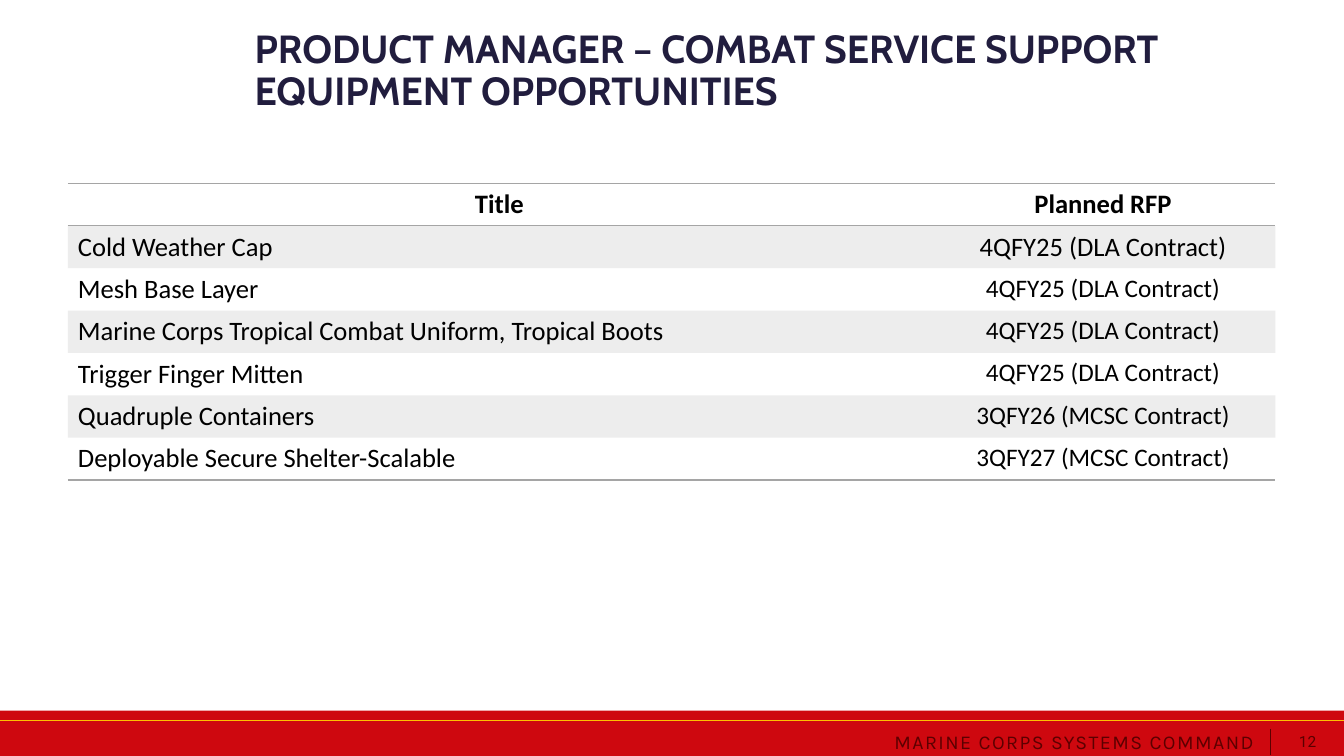
import pptx
import pptx.dml.color
import pptx.enum.shapes
import pptx.enum.text
import pptx.oxml
import pptx.oxml.ns
import pptx.util
import lxml.etree

Pt = pptx.util.Pt
ALIGN = pptx.enum.text.PP_ALIGN
ANCHOR = pptx.enum.text.MSO_ANCHOR

COLORS = {
    "red": "CE080F",
    "gold": "FFC000",
    "maroon": "5C0000",
    "navy": "211D3E",
    "black": "000000",
    "rule": "A5A5A5",
    "band": "A5A5A5",
}
OPPORTUNITIES = [
    ("Title", "Planned RFP"),
    ("Cold Weather Cap", "4QFY25 (DLA Contract)"),
    ("Mesh Base Layer", "4QFY25 (DLA Contract)"),
    ("Marine Corps Tropical Combat Uniform, Tropical Boots", "4QFY25 (DLA Contract)"),
    ("Trigger Finger Mitten", "4QFY25 (DLA Contract)"),
    ("Quadruple Containers", "3QFY26 (MCSC Contract)"),
    ("Deployable Secure Shelter-Scalable", "3QFY27 (MCSC Contract)"),
]
COLUMN_WIDTHS = (616.3, 246.2)
ROW_HEIGHT = 30.3


def rgb(name):
    """Return the palette colour of that name."""
    return pptx.dml.color.RGBColor.from_string(COLORS[name])


def write(frame, text, font="Calibri", size=19, color="black", bold=False,
          align=ALIGN.LEFT, line_spacing=1.0, tracking=0):
    """Put one formatted paragraph into a text frame."""
    paragraph = frame.paragraphs[0]
    paragraph.alignment = align
    paragraph.line_spacing = line_spacing
    paragraph.space_before = Pt(0)
    run = paragraph.add_run()
    run.text = text
    run.font.name = font
    run.font.size = Pt(size)
    run.font.bold = bold
    run.font.color.rgb = rgb(color)
    if tracking:
        run.font._element.set("spc", str(tracking * 100))


def set_frame(frame, inset, anchor=ANCHOR.TOP):
    """Set wrapping, anchor and margins (horizontal, vertical) of a text frame."""
    frame.word_wrap = True
    frame.auto_size = pptx.enum.text.MSO_AUTO_SIZE.NONE
    frame.vertical_anchor = anchor
    frame.margin_left = frame.margin_right = Pt(inset[0])
    frame.margin_top = frame.margin_bottom = Pt(inset[1])


def add_label(slide, box, text, inset=(0, 0), anchor=ANCHOR.TOP, **style):
    """Add a text box with one formatted paragraph."""
    frame = slide.shapes.add_textbox(*map(Pt, box)).text_frame
    set_frame(frame, inset, anchor)
    write(frame, text, **style)


def add_rule(slide, ends, color, width):
    """Add a straight line without shadow."""
    rule = slide.shapes.add_connector(
        pptx.enum.shapes.MSO_CONNECTOR.STRAIGHT, *map(Pt, ends))
    rule.line.color.rgb = rgb(color)
    rule.line.width = Pt(width)
    lxml.etree.SubElement(rule._element.spPr, pptx.oxml.ns.qn("a:effectLst"))


def add_footer(slide):
    """Draw the red footer with its lines, name and page number."""
    band = slide.shapes.add_shape(
        pptx.enum.shapes.MSO_SHAPE.RECTANGLE, Pt(0), Pt(507.6), Pt(960), Pt(32.4))
    band.shadow.inherit = False
    band.fill.solid()
    band.fill.fore_color.rgb = rgb("red")
    band.line.fill.background()
    add_rule(slide, (0, 514.8, 960, 514.8), "gold", 0.5)
    add_rule(slide, (907.5, 520.6, 907.5, 539.3), "maroon", 0.25)
    add_label(slide, (911.5, 524.9, 28.8, 10.8), "12", anchor=ANCHOR.MIDDLE,
              font="Roboto", size=11, color="maroon", align=ALIGN.RIGHT, line_spacing=0.9)
    add_label(slide, (489.6, 517.7, 413.3, 24.3), "MARINE CORPS SYSTEMS COMMAND",
              inset=(7.2, 3.6), font="Karla", size=14, color="maroon",
              align=ALIGN.RIGHT, tracking=1)


def add_title(slide, text):
    """Place and format the title placeholder."""
    title = slide.shapes.title
    title.left, title.top, title.width, title.height = map(Pt, (181.8, 20.9, 730, 28.1))
    set_frame(title.text_frame, (0, 0))
    write(title.text_frame, text, font="Cabin", size=28, color="navy",
          bold=True, line_spacing=0.9)


def set_borders(cell, ruled):
    """Rule the named edges of a cell and clear the others."""
    properties = cell._tc.get_or_add_tcPr()
    for index, edge in enumerate(("lnL", "lnR", "lnT", "lnB")):
        paint = "<a:noFill/>"
        if edge in ruled:
            paint = f'<a:solidFill><a:srgbClr val="{COLORS["rule"]}"/></a:solidFill>'
        properties.insert(index, pptx.oxml.parse_xml(
            f'<a:{edge} {pptx.oxml.ns.nsdecls("a")} w="{Pt(1)}">{paint}</a:{edge}>'))


def fill_cell(cell, banded):
    """Give a cell the translucent band or no fill."""
    if not banded:
        cell.fill.background()
        return
    cell.fill.solid()
    cell.fill.fore_color.rgb = rgb("band")
    tint = cell._tc.tcPr.find(".//" + pptx.oxml.ns.qn("a:srgbClr"))
    lxml.etree.SubElement(tint, pptx.oxml.ns.qn("a:alpha")).set("val", "20000")


def add_opportunities(slide):
    """Add the table of titles and planned RFP dates."""
    count = len(OPPORTUNITIES)
    table = slide.shapes.add_table(
        count, 2, Pt(48.5), Pt(131), Pt(sum(COLUMN_WIDTHS)), Pt(ROW_HEIGHT * count)).table
    table.horz_banding = False
    table.first_row = False
    for column, width in zip(table.columns, COLUMN_WIDTHS):
        column.width = Pt(width)
    for row, texts in enumerate(OPPORTUNITIES):
        table.rows[row].height = Pt(ROW_HEIGHT)
        ruled = {0: ("lnT", "lnB"), 1: ("lnT",), count - 1: ("lnB",)}.get(row, ())
        for col, text in enumerate(texts):
            cell = table.cell(row, col)
            write(cell.text_frame, text, size=18 if col and row > 1 else 19, bold=row == 0,
                  align=ALIGN.CENTER if col or row == 0 else ALIGN.LEFT)
            fill_cell(cell, row % 2 == 1)
            set_borders(cell, ruled)


def main():
    """Build the slide and save it."""
    deck = pptx.Presentation()
    deck.slide_width, deck.slide_height = Pt(960), Pt(540)
    slide = deck.slides.add_slide(deck.slide_layouts[5])
    add_footer(slide)
    add_title(slide, "PRODUCT MANAGER – COMBAT SERVICE SUPPORT EQUIPMENT OPPORTUNITIES")
    add_opportunities(slide)
    deck.save("out.pptx")


if __name__ == "__main__":
    main()
